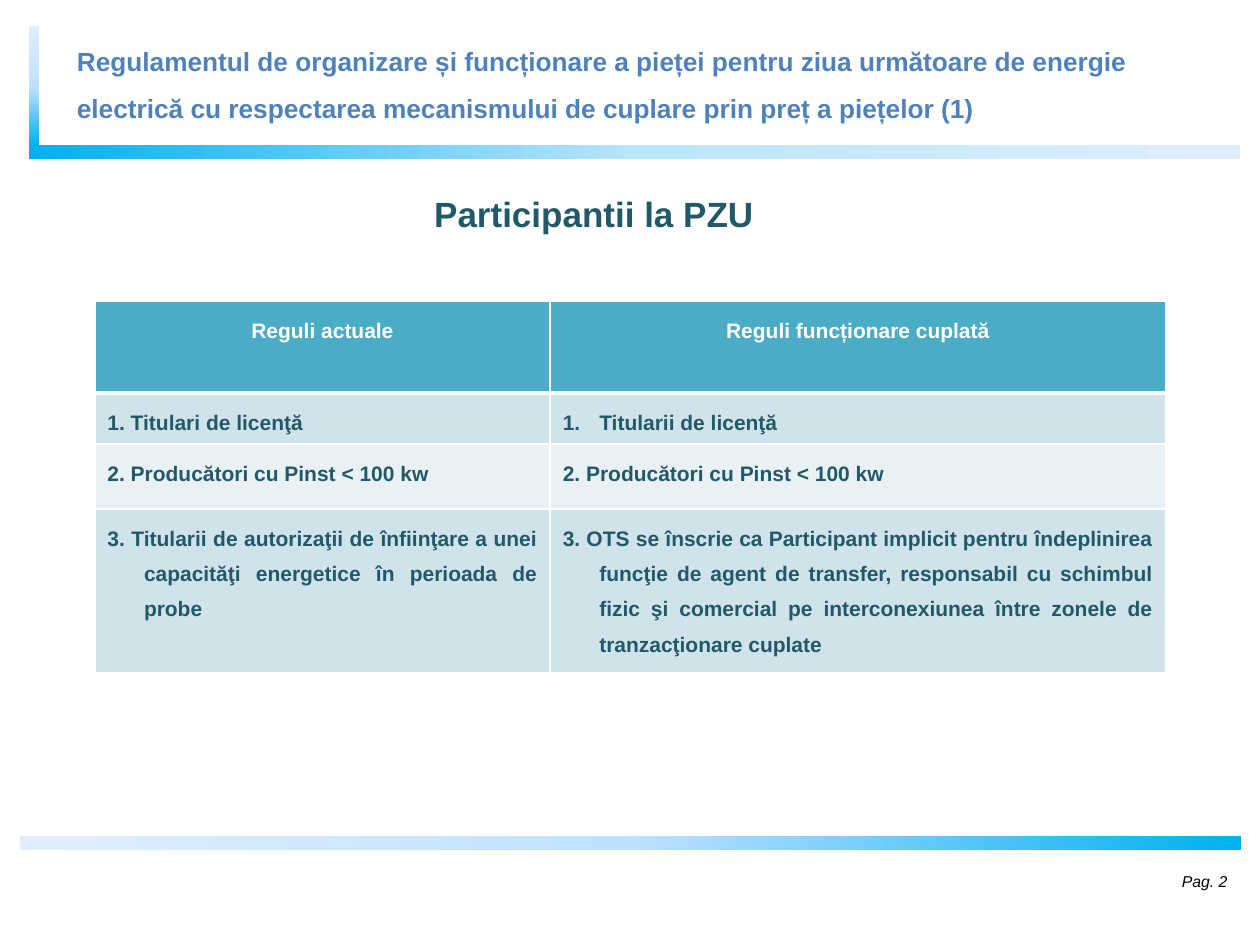
import copy
import dataclasses

import lxml.etree
import pptx
import pptx.dml.color
import pptx.enum.shapes
import pptx.enum.text
import pptx.oxml.ns
import pptx.util

Pt = pptx.util.Pt
RGB = pptx.dml.color.RGBColor.from_string
qn = pptx.oxml.ns.qn
ALIGN = pptx.enum.text.PP_ALIGN
ANCHOR = pptx.enum.text.MSO_ANCHOR


@dataclasses.dataclass(frozen=True)
class Theme:
    font: str = "Arial"
    white: str = "FFFFFF"
    black: str = "000000"
    title: str = "4F81BD"
    text: str = "215968"
    header: str = "4BACC6"
    bands: tuple = ("D0E3EA", "E9F1F5")
    top_bar: tuple = ("00B0F0", "B9E5FF", "E0EFFF")
    side_bar: tuple = ("00B0F0", "BFE1FF", "E0EFFF")
    title_size: float = 15
    heading_size: float = 20
    table_size: float = 12
    page_size: float = 9


def write(tf, text, size, color, bold=False, italic=False, align=ALIGN.LEFT,
          spacing=None, hanging=0, numbered=False, font=Theme.font):
    tf.word_wrap = True
    p = tf.paragraphs[0]
    p.alignment = align
    if spacing:
        p.line_spacing = spacing
    if hanging:
        pPr = p._p.get_or_add_pPr()
        pPr.set("marL", str(Pt(hanging)))
        pPr.set("indent", str(-Pt(hanging)))
        if numbered:
            lxml.etree.SubElement(pPr, qn("a:buAutoNum"), type="arabicPeriod")
    r = p.add_run()
    r.text = text
    r.font.name, r.font.size = font, Pt(size)
    r.font.bold, r.font.italic = bold, italic
    r.font.color.rgb = RGB(color)


class Deck:
    """Holds the theme and the current slide, and draws each kind of element."""

    def __init__(self, prs, theme):
        self.theme = theme
        self.s = prs.slides.add_slide(prs.slide_layouts[5])

    def title(self, text, box):
        sp = self.s.shapes.title
        sp.left, sp.top, sp.width, sp.height = map(Pt, box)
        tf = sp.text_frame
        tf.auto_size = pptx.enum.text.MSO_AUTO_SIZE.NONE
        tf.vertical_anchor = ANCHOR.MIDDLE
        write(tf, text, self.theme.title_size, self.theme.title, bold=True, spacing=1.5)

    def bar(self, box, colors, angle=0):
        sp = self.s.shapes.add_shape(pptx.enum.shapes.MSO_SHAPE.RECTANGLE, *map(Pt, box))
        sp.shadow.inherit = False
        sp.line.fill.background()
        sp.fill.gradient()
        sp.fill.gradient_angle = angle
        stops = sp.fill._xPr.find(qn("a:gradFill")).find(qn("a:gsLst"))
        stops.insert(1, copy.deepcopy(stops[0]))
        for stop, color, position in zip(sp.fill.gradient_stops, colors, (0, 0.5, 1)):
            stop.color.rgb = RGB(color)
            stop.position = position

    def text(self, text, box, fill=None, anchor=ANCHOR.TOP, **fmt):
        sp = self.s.shapes.add_textbox(*map(Pt, box))
        if fill:
            sp.fill.solid()
            sp.fill.fore_color.rgb = RGB(fill)
        sp.text_frame.vertical_anchor = anchor
        write(sp.text_frame, text, **fmt)

    def border(self, cell, **widths):
        tcPr = cell._tc.get_or_add_tcPr()
        for side, width in widths.items():
            ln = lxml.etree.SubElement(tcPr, qn(f"a:ln{side}"), w=str(Pt(width)))
            fill = lxml.etree.SubElement(ln, qn("a:solidFill"))
            lxml.etree.SubElement(fill, qn("a:srgbClr"), val=self.theme.white)

    def table(self, left, top, widths, heights, rows):
        t = self.theme
        table = self.s.shapes.add_table(
            len(rows), len(widths), Pt(left), Pt(top), Pt(sum(widths)), Pt(sum(heights))).table
        table.horz_banding = False
        for column, width in zip(table.columns, widths):
            column.width = Pt(width)
        for i, (row, height) in enumerate(zip(rows, heights)):
            table.rows[i].height = Pt(height)
            for j, (text, fmt) in enumerate(row):
                cell = table.cell(i, j)
                self.border(cell, L=1, R=1, T=3 if i == 1 else 1, B=3 if i == 0 else 1)
                cell.fill.solid()
                cell.fill.fore_color.rgb = RGB(t.bands[(i - 1) % 2] if i else t.header)
                write(cell.text_frame, text, t.table_size, t.text if i else t.white,
                      bold=True, spacing=1.5, **fmt)


def main():
    prs = pptx.Presentation()
    prs.slide_width, prs.slide_height = Pt(720), Pt(540)
    t = Theme()
    deck = Deck(prs, t)

    deck.bar((16.6, 83, 692, 7.8), t.top_bar)
    deck.bar((16.6, 14.9, 5.8, 68.4), t.side_bar, angle=90)
    deck.bar((11.5, 478, 697.5, 7.6), t.side_bar[::-1])
    deck.text("Pag. 2", (630, 489, 78.5, 28.8), anchor=ANCHOR.MIDDLE,
              size=t.page_size, color=t.black, italic=True, align=ALIGN.RIGHT)
    deck.text("Participantii la PZU", (241, 106.5, 217, 33), fill=t.white,
              size=t.heading_size, color=t.text, bold=True)

    center = dict(align=ALIGN.CENTER)
    justify = dict(align=ALIGN.JUSTIFY)
    hanging = dict(justify, hanging=20.9)
    rows = [
        [("Reguli actuale", center), ("Reguli funcționare cuplată", center)],
        [("1. Titulari de licenţă", {}),
         ("Titularii de licenţă", dict(hanging, numbered=True))],
        [("2. Producători cu Pinst < 100 kw", {}),
         ("2. Producători cu Pinst < 100 kw", justify)],
        [("3. Titularii de autorizaţii de înfiinţare a unei capacităţi energetice "
          "în perioada de probe", hanging),
         ("3. OTS se înscrie ca Participant implicit pentru îndeplinirea funcţie de agent "
          "de transfer, responsabil cu schimbul fizic şi comercial pe interconexiunea "
          "între zonele de tranzacţionare cuplate", hanging)],
    ]
    deck.table(54.2, 172.4, (260.2, 351.8), (52.2, 29.2, 37.2, 88), rows)
    deck.title("Regulamentul de organizare și funcționare a pieței pentru ziua următoare de "
               "energie electrică cu respectarea mecanismului de cuplare prin preț a "
               "piețelor (1)", (36.7, 15.1, 669, 57))
    prs.save("out.pptx")


if __name__ == "__main__":
    main()
